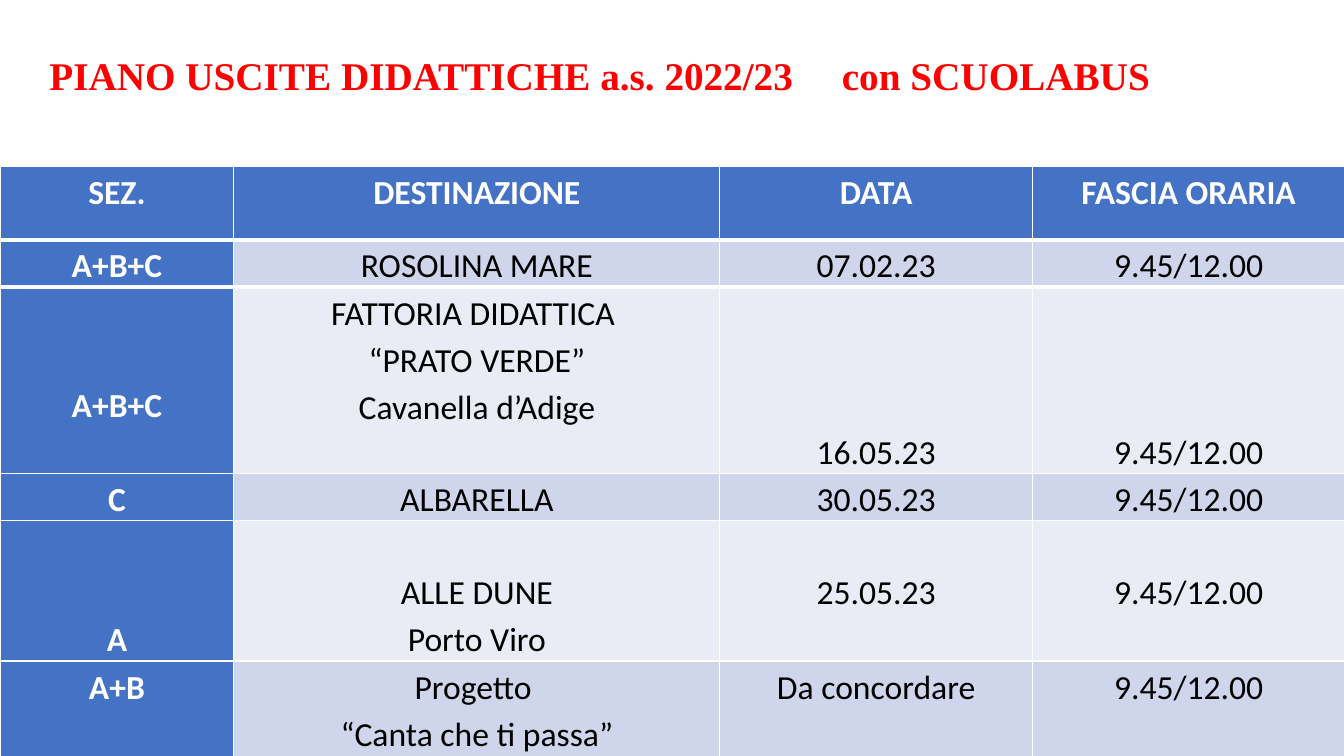
import pptx
import pptx.util
import pptx.dml.color
import pptx.enum.text
import pptx.oxml.ns
from lxml import etree

Inches = pptx.util.Inches
Align = pptx.enum.text.PP_ALIGN
qn = pptx.oxml.ns.qn

TITLE = "PIANO USCITE DIDATTICHE a.s. 2022/23\tcon SCUOLABUS"
HEADER = ["SEZ.", "DESTINAZIONE", "DATA", "FASCIA ORARIA"]
HOURS = "9.45/12.00"
# Each outing: cell texts, then how many lines each text is pushed down
OUTINGS = [
    (["A+B+C", "ROSOLINA MARE", "07.02.23", HOURS], [0, 0, 0, 0]),
    (["A+B+C", "FATTORIA DIDATTICA \n“PRATO VERDE”\nCavanella d’Adige", "16.05.23", HOURS],
     [2, 0, 3, 3]),
    (["C", "ALBARELLA", "30.05.23", HOURS], [0, 0, 0, 0]),
    (["A", "ALLE DUNE\nPorto Viro", "25.05.23", HOURS], [2, 1, 1, 1]),
    (["A+B", "Progetto \v“Canta che ti passa”", "Da concordare", HOURS], [0, 0, 0, 0]),
]
COLUMN_WIDTHS = [2.32, 4.82, 3.1, 3.1]
ROW_HEIGHTS = [0.73, 0.36, 1.49, 0.36, 1.11, 1.8]
TABLE_TOP = 1.65
LINE_HEIGHT = 0.46
COLORS = {"title": "FF0000", "heading": "FFFFFF", "text": "000000",
          "accent": "4472C4", "odd": "CFD5EA", "even": "E9EBF5", "border": "FFFFFF"}


def color(name):
    return pptx.dml.color.RGBColor.from_string(COLORS[name])


def write(frame, text, size=24, font="Calibri", ink="text", bold=False,
          align=Align.CENTER, spacing=1.15):
    frame.text = text
    for paragraph in frame.paragraphs:
        paragraph.alignment = align
        paragraph.line_spacing = spacing
        for run in paragraph.runs:
            run.font.size = pptx.util.Pt(size)
            run.font.name = font
            run.font.bold = bold
            run.font.color.rgb = color(ink)


def add_tab_stop(paragraph, position):
    properties = paragraph._p.get_or_add_pPr()
    tab_list = etree.SubElement(properties, qn("a:tabLst"))
    etree.SubElement(tab_list, qn("a:tab"), pos=str(Inches(position)), algn="l")


def add_border(cell, side, points):
    """Draw one cell border; side is the element name, such as a:lnB."""
    line = etree.Element(qn(side), w=str(pptx.util.Pt(points)))
    fill = etree.SubElement(line, qn("a:solidFill"))
    etree.SubElement(fill, qn("a:srgbClr"), val=COLORS["border"])
    cell._tc.get_or_add_tcPr().insert(0, line)


def add_title(slide):
    title = slide.shapes.title
    title.left, title.top = Inches(0.39), Inches(0.46)
    title.width, title.height = Inches(13.2), Inches(0.88)
    frame = title.text_frame
    write(frame, TITLE, size=28, font="Times New Roman", ink="title", bold=True,
          align=Align.LEFT, spacing=1.0)
    frame.word_wrap = True
    frame.auto_size = pptx.enum.text.MSO_AUTO_SIZE.NONE
    frame.vertical_anchor = pptx.enum.text.MSO_ANCHOR.TOP
    add_tab_stop(frame.paragraphs[0], 7.86)


def add_outings_table(slide):
    rows = [(HEADER, [0] * len(HEADER))] + OUTINGS
    table = slide.shapes.add_table(
        len(rows), len(HEADER), 0, Inches(TABLE_TOP),
        Inches(sum(COLUMN_WIDTHS)), Inches(sum(ROW_HEIGHTS))).table
    table.first_col = True
    for column, width in zip(table.columns, COLUMN_WIDTHS):
        column.width = Inches(width)
    for row, height in zip(table.rows, ROW_HEIGHTS):
        row.height = Inches(height)
    for row_index, (texts, lines_down) in enumerate(rows):
        for column_index, (text, down) in enumerate(zip(texts, lines_down)):
            cell = table.cell(row_index, column_index)
            heading = row_index == 0 or column_index == 0
            band = "odd" if row_index % 2 else "even"
            cell.fill.solid()
            cell.fill.fore_color.rgb = color("accent" if heading else band)
            cell.margin_left = cell.margin_right = Inches(0.07)
            cell.margin_top = Inches(down * LINE_HEIGHT)
            cell.margin_bottom = 0
            write(cell.text_frame, text, ink="heading" if heading else "text", bold=heading)
            if row_index == 0:
                add_border(cell, "a:lnB", 3)
            elif row_index == 1:
                add_border(cell, "a:lnT", 3)


def main():
    presentation = pptx.Presentation()
    presentation.slide_width, presentation.slide_height = Inches(13.33), Inches(7.5)
    slide = presentation.slides.add_slide(presentation.slide_layouts.get_by_name("Title Only"))
    add_outings_table(slide)
    add_title(slide)
    presentation.save("out.pptx")


if __name__ == "__main__":
    main()
